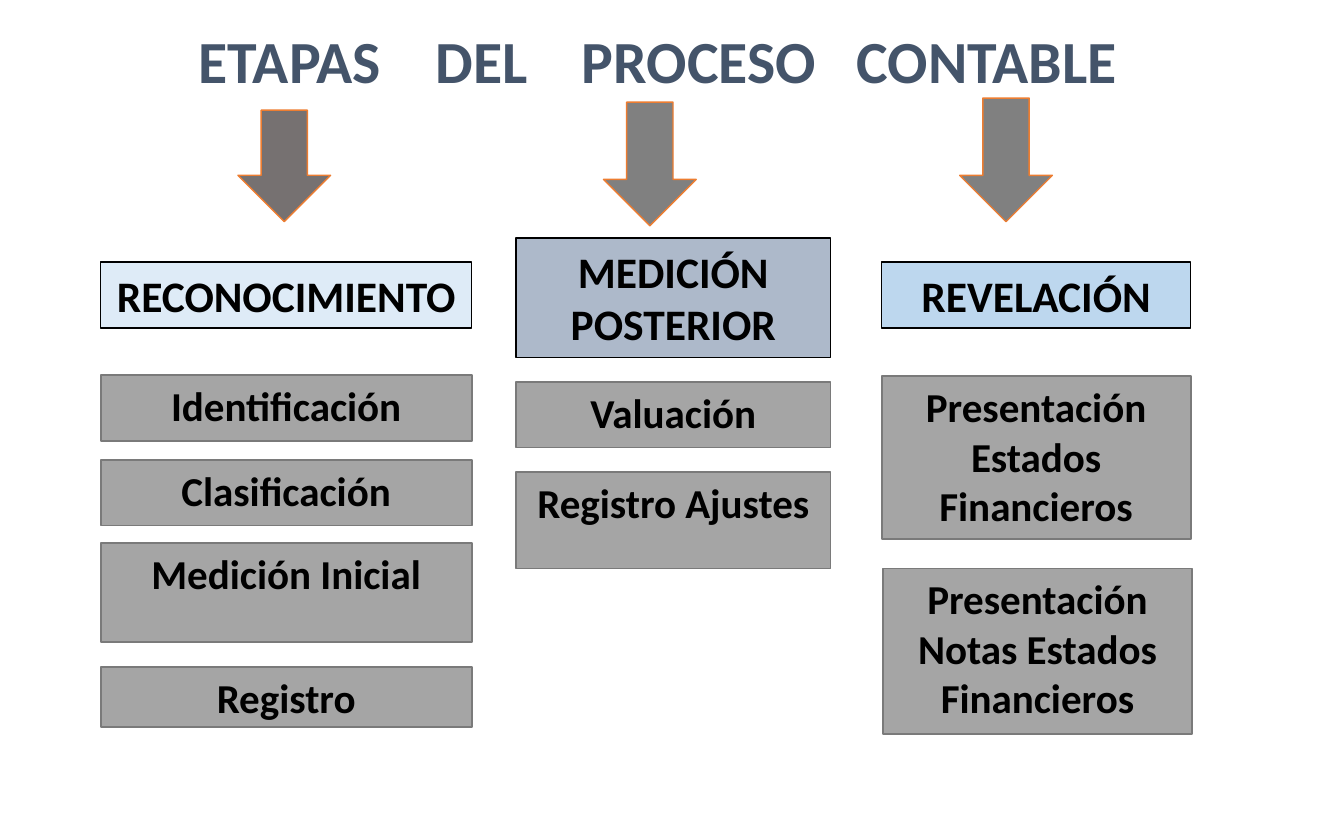
"""Build the slide on the stages of the accounting process."""
import pptx
import pptx.dml.color
import pptx.enum.shapes
import pptx.enum.text
import pptx.util

Inches = pptx.util.Inches
Pt = pptx.util.Pt
KIND = pptx.enum.shapes.MSO_SHAPE
FIT = pptx.enum.text.MSO_AUTO_SIZE

TITLE = [("ETAPAS", 4), ("DEL", 4), ("PROCESO", 3), ("CONTABLE", 0)]
STAGES = [
    {"left": 0.75, "wide": 2.76, "fill": "DEEBF7",
     "arrow": (1.77, 0.82, 0.69, 0.83, "767171"),
     "head": ("RECONOCIMIENTO", 1.95, 0.49),
     "steps": [("Identificación", 0, 2.79, 0.49),
               ("Clasificación", 0, 3.42, 0.49),
               ("Medición Inicial", 0, 4.04, 0.74),
               ("Registro", 0, 4.96, 0.45)]},
    {"left": 3.84, "wide": 2.34, "fill": "ADB9CA",
     "arrow": (4.49, 0.76, 0.69, 0.92, "808080"),
     "head": ("MEDICIÓN POSTERIOR", 1.77, 0.89),
     "steps": [("Valuación", 0, 2.84, 0.49),
               ("Registro Ajustes", 0, 3.51, 0.72)]},
    {"left": 6.56, "wide": 2.3, "fill": "BDD7EE",
     "arrow": (7.14, 0.73, 0.69, 0.92, "808080"),
     "head": ("REVELACIÓN", 1.95, 0.49),
     "steps": [("Presentación Estados Financieros", 0, 2.8, 1.21),
               ("Presentación Notas Estados Financieros", 0.01, 4.23, 1.23)]},
]
THEME = {
    "font": "Calibri", "space": 0.226,
    "title": {"size": 32, "color": "44546A", "pad": (0.08, 0.04)},
    "head": {"size": 23.3, "color": "000000", "pad": (0.1, 0.05),
             "line": "000000", "width": 0.75, "fit": FIT.SHAPE_TO_FIT_TEXT},
    "step": {"size": 22, "color": "000000", "pad": (0.08, 0.04),
             "fill": "A5A5A5", "line": "7A7A7A", "width": 1},
    "arrow": {"line": "ED7D31", "width": 0.75},
}


def tint(code):
    """Turn a hex code into a colour."""
    return pptx.dml.color.RGBColor.from_string(code)


def assign(thing, values):
    """Set each attribute in a dict of format values."""
    for name, value in values.items():
        setattr(thing, name, value)


def write(shape, parts, look):
    """Write words, each followed by a gap counted in spaces."""
    frame = shape.text_frame
    wide, high = map(Inches, look["pad"])
    assign(frame, {"word_wrap": True, "auto_size": look.get("fit", FIT.NONE),
                   "vertical_anchor": pptx.enum.text.MSO_ANCHOR.TOP,
                   "margin_left": wide, "margin_right": wide,
                   "margin_top": high, "margin_bottom": high})
    para = frame.paragraphs[0]
    para.alignment = pptx.enum.text.PP_ALIGN.CENTER
    for word, gap in parts:
        for text in (word, " ") if gap else (word,):
            run = para.add_run()
            run.text = text
            assign(run.font, {"name": THEME["font"], "bold": True,
                              "size": Pt(look["size"])})
            run.font.color.rgb = tint(look["color"])
            if text == " ":
                extra = (gap - 1) * THEME["space"] * look["size"]
                run._r.get_or_add_rPr().set("spc", str(round(extra * 100)))


def draw(slide, kind, place, fill, look):
    """Draw a filled and outlined shape."""
    shape = slide.shapes.add_shape(kind, *map(Inches, place))
    shape.shadow.inherit = False
    shape.fill.solid()
    shape.fill.fore_color.rgb = tint(fill)
    shape.line.color.rgb = tint(look["line"])
    shape.line.width = Pt(look["width"])
    return shape


def main():
    """Lay out the title, arrows, heads and steps."""
    deck = pptx.Presentation()
    assign(deck, {"slide_width": Inches(10), "slide_height": Inches(6.25)})
    slide = deck.slides.add_slide(deck.slide_layouts[6])
    title = slide.shapes.add_textbox(*map(Inches, (0.91, 0.14, 7.97, 1.02)))
    write(title, TITLE, THEME["title"])
    for stage in STAGES:
        left, wide = stage["left"], stage["wide"]
        *place, fill = stage["arrow"]
        draw(slide, KIND.DOWN_ARROW, place, fill, THEME["arrow"])
        text, top, high = stage["head"]
        rows = [(text, 0, top, high, stage["fill"], THEME["head"])]
        step = THEME["step"]
        rows += [(*row, step["fill"], step) for row in stage["steps"]]
        for text, shift, top, high, fill, look in rows:
            place = (left + shift, top, wide, high)
            box = draw(slide, KIND.RECTANGLE, place, fill, look)
            write(box, [(text, 0)], look)
    deck.save("out.pptx")


if __name__ == "__main__":
    main()
